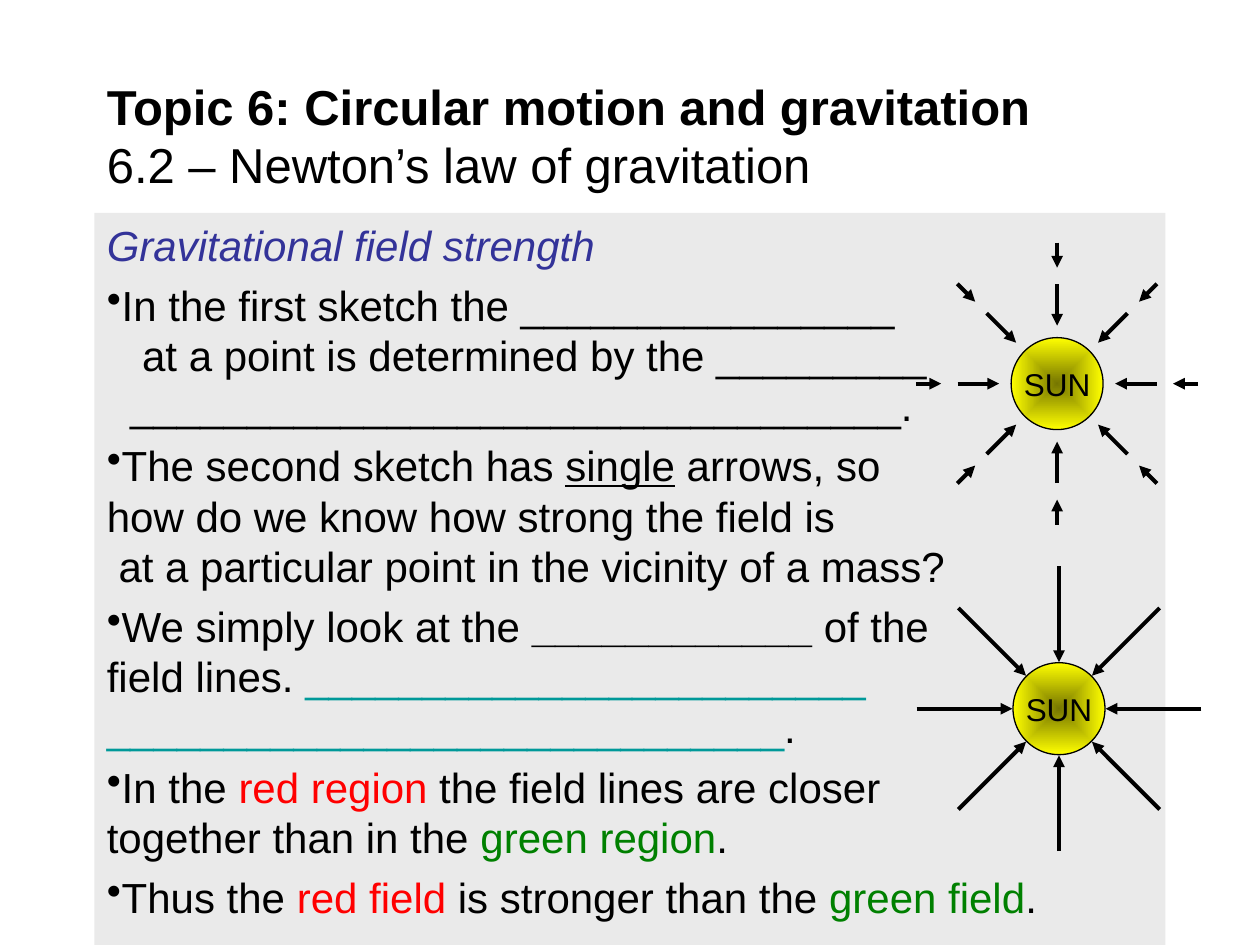
from math import cos, radians, sin
from lxml.etree import SubElement
from pptx import Presentation
from pptx.dml.color import RGBColor
from pptx.enum.shapes import MSO_CONNECTOR, MSO_SHAPE
from pptx.enum.text import MSO_ANCHOR, PP_ALIGN
from pptx.oxml import parse_xml
from pptx.oxml.ns import nsdecls, qn
from pptx.util import Inches, Pt

HUES = {
    "ink": "000000", "panel": "EAEAEA", "head": "333399", "teal": "009999",
    "red": "FF0000", "green": "008000", "core": "767600", "rim": "FFFF00",
}
COLS, ROWS = 100, 75
SUN = 7.3
RINGS = [(7.9, 4.6), (11.2, 9.2)]
LONG = [(11.3, 3.7)]


class Deck:
    def __init__(self):
        self.file = Presentation()
        self.file.slide_width, self.file.slide_height = Inches(10), Inches(7.5)
        self.col = self.file.slide_width / COLS
        self.row = self.file.slide_height / ROWS
        self.slide = self.file.slides.add_slide(self.file.slide_layouts[6])

    def at(self, *spots):
        return [round(n * (self.row if i % 2 else self.col)) for i, n in enumerate(spots)]

    def hue(self, name):
        return RGBColor.from_string(HUES[name])

    def words(self, para, runs, size):
        for text, *look in runs:
            form = {"name": "Arial", "size": Pt(size), "bold": False,
                    "italic": False, "underline": False}
            form.update(look[0] if look else {})
            tint = form.pop("hue", "ink")
            for i, line in enumerate(text.split("\n")):
                if i:
                    para.add_line_break()
                if not line:
                    continue
                run = para.add_run()
                run.text = line
                for key, value in form.items():
                    setattr(run.font, key, value)
                run.font.color.rgb = self.hue(tint)

    def bullet(self, para, dot, inset):
        props = para._p.get_or_add_pPr()
        props.set("marL", str(round(inset * self.col)))
        props.set("indent", "0")
        mark = SubElement(props, qn("a:buChar" if dot else "a:buNone"))
        if dot:
            mark.set("char", "•")

    def label(self, spot, runs, size, home=None, **form):
        frame = (home or self.slide).shapes.add_textbox(*self.at(*spot)).text_frame
        base = {"word_wrap": True, "vertical_anchor": MSO_ANCHOR.MIDDLE}
        for key, value in {**base, **form}.items():
            setattr(frame, key, value)
        self.words(frame.paragraphs[0], runs, size)
        return frame

    def panel(self, spot, rows):
        box = self.slide.shapes.add_shape(MSO_SHAPE.RECTANGLE, *self.at(*spot))
        box.shadow.inherit = False
        box.fill.solid()
        box.fill.fore_color.rgb = self.hue("panel")
        box.line.fill.background()
        frame = box.text_frame
        frame.word_wrap, frame.vertical_anchor = True, MSO_ANCHOR.TOP
        for i, (dot, inset, gap, runs) in enumerate(rows):
            para = frame.add_paragraph() if i else frame.paragraphs[0]
            form = {"alignment": PP_ALIGN.LEFT, "space_before": Pt(gap)}
            for key, value in form.items():
                setattr(para, key, value)
            self.bullet(para, dot, inset)
            self.words(para, runs, 24)

    def arrow(self, home, start, end):
        line = home.shapes.add_connector(MSO_CONNECTOR.STRAIGHT, *self.at(*start, *end))
        line.line.color.rgb = self.hue("ink")
        line.line.width = Pt(2.25)
        props = line._element.spPr
        SubElement(props.find(qn("a:ln")), qn("a:tailEnd")).set("type", "triangle")
        SubElement(props, qn("a:effectLst"))

    def ball(self, home, x, y):
        disc = home.shapes.add_shape(
            MSO_SHAPE.OVAL, *self.at(x - SUN / 2, y - SUN / 2, SUN, SUN))
        disc.shadow.inherit = False
        disc.line.color.rgb = self.hue("ink")
        disc.line.width = Pt(0.75)
        stops = "".join(
            f'<a:gs pos="{pos}"><a:srgbClr val="{HUES[name]}"/></a:gs>'
            for pos, name in ((0, "core"), (100000, "rim")))
        fill = parse_xml(
            f'<a:gradFill {nsdecls("a")}><a:gsLst>{stops}</a:gsLst><a:path path="shape">'
            '<a:fillToRect l="50000" t="50000" r="50000" b="50000"/></a:path></a:gradFill>')
        disc._element.spPr.find(qn("a:prstGeom")).addnext(fill)

    def field(self, x, y, rings):
        home = self.slide.shapes.add_group_shape()
        self.ball(home, x, y)
        frame = self.label((x - SUN / 2, y - 2, SUN, 4), [("SUN",)], 18, home, word_wrap=False)
        frame.paragraphs[0].alignment = PP_ALIGN.CENTER
        for far, near in rings:
            for turn in range(0, 360, 45):
                dx, dy = cos(radians(turn)), sin(radians(turn))
                self.arrow(home, (x + far * dx, y + far * dy), (x + near * dx, y + near * dy))


def main():
    deck = Deck()
    red, green, teal = ({"hue": name} for name in ("red", "green", "teal"))
    gap = 5.4
    deck.panel((7.5, 16.9, 85, 58.1), [
        (False, 0, gap, [("Gravitational field strength", {"hue": "head", "italic": True})]),
        (True, 0, gap, [("In the first sketch the ________________",)]),
        (False, 2.8, 0, [("at a point is determined by the _________",)]),
        (False, 1.85, 0, [("_________________________________.",)]),
        (True, 0, gap, [("The second sketch has ",), ("single", {"underline": True}),
                        (" arrows, so\nhow do we know how strong the field is",)]),
        (False, 0.93, 0, [("at a particular point in the vicinity of a mass?",)]),
        (True, 0, gap, [("We simply look at the ",), ("____________ ", {"bold": True}),
                        ("of the\nfield lines. ",),
                        ("________________________\n_____________________________", teal),
                        (".",)]),
        (True, 0, gap, [("In the ",), ("red region", red),
                        (" the field lines are closer\ntogether than in the ",),
                        ("green region", green), (".",)]),
        (True, 0, gap, [("Thus the ",), ("red field", red), (" is stronger than the ",),
                        ("green field", green), (".",)]),
    ])
    deck.label((7.5, 5.8, 85, 9.8), [
        ("Topic 6: Circular motion and gravitation\n", {"bold": True}),
        ("6.2 – Newton’s law of gravitation",)], 28)
    deck.field(83.9, 30.45, RINGS)
    deck.field(84.05, 56.25, LONG)
    deck.file.save("out.pptx")


if __name__ == "__main__":
    main()
